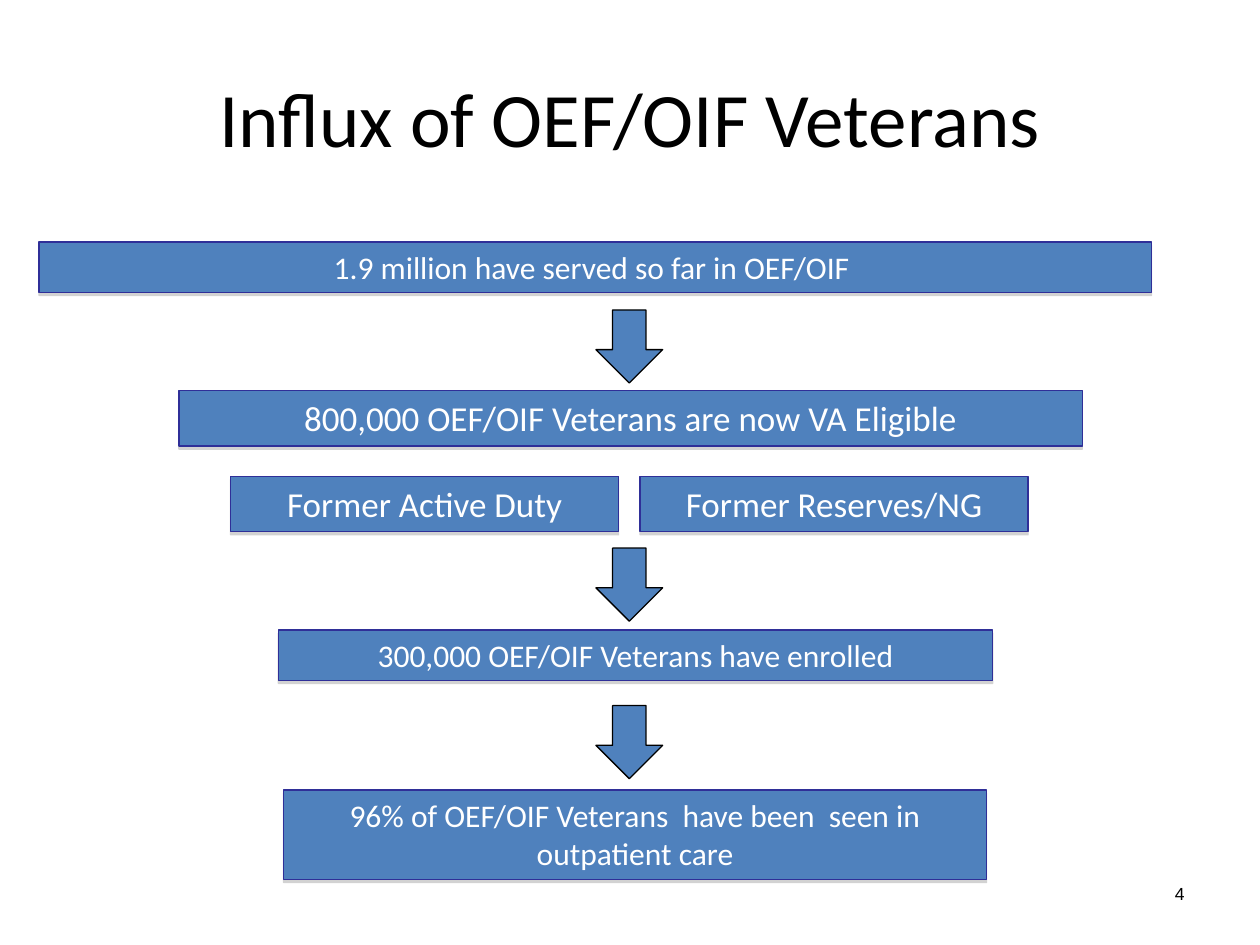
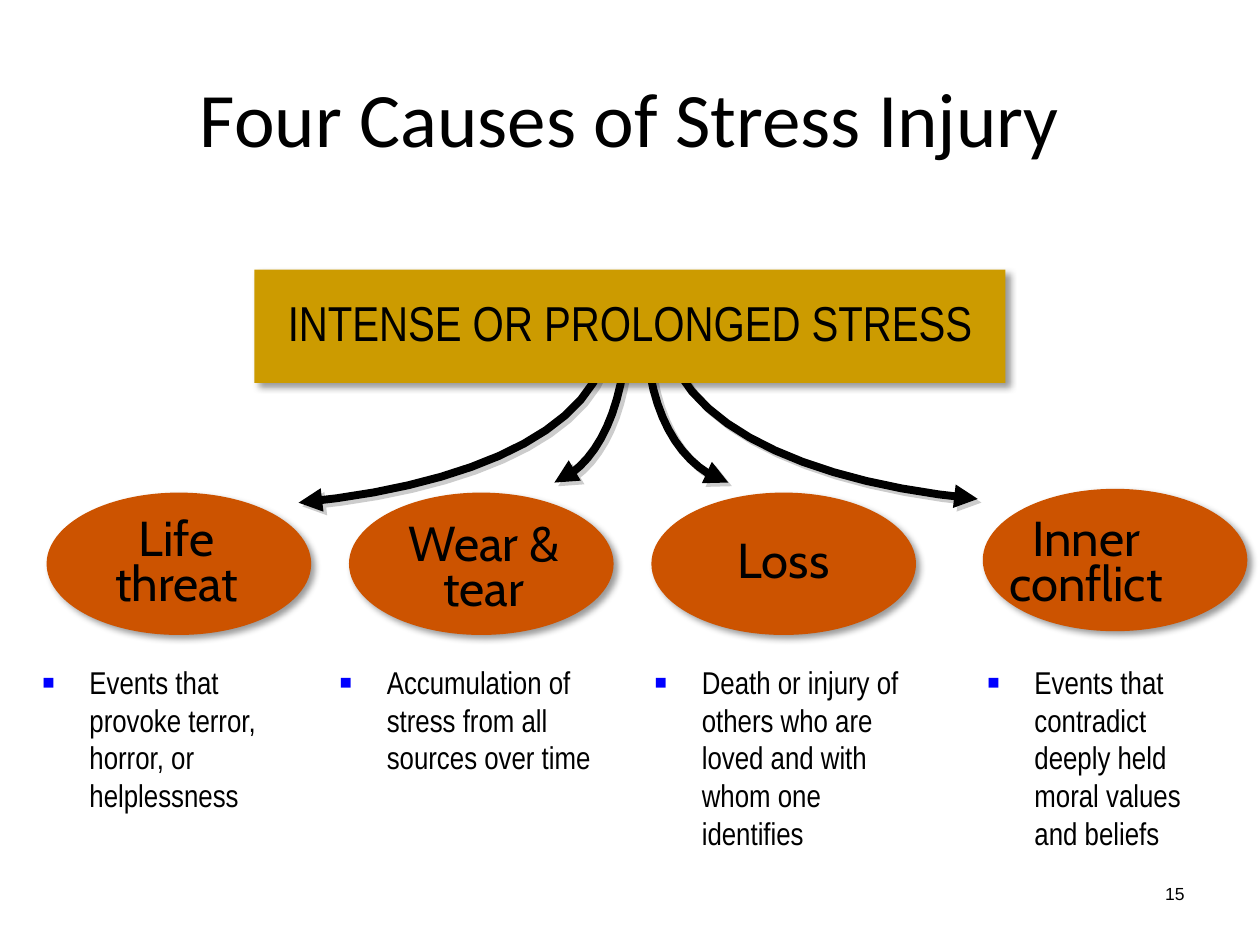
from dataclasses import dataclass

from lxml import etree
from pptx import Presentation
from pptx.dml.color import RGBColor
from pptx.enum.shapes import MSO_SHAPE
from pptx.enum.text import MSO_ANCHOR, MSO_AUTO_SIZE, PP_ALIGN
from pptx.oxml.ns import qn
from pptx.util import Inches, Pt

RECTANGLE, OVAL, DOWN_ARROW = MSO_SHAPE.RECTANGLE, MSO_SHAPE.OVAL, MSO_SHAPE.DOWN_ARROW
TOP, MIDDLE = MSO_ANCHOR.TOP, MSO_ANCHOR.MIDDLE
LEFT, CENTER, RIGHT = PP_ALIGN.LEFT, PP_ALIGN.CENTER, PP_ALIGN.RIGHT
NO_AUTO_SIZE = MSO_AUTO_SIZE.NONE
TITLE_ONLY_LAYOUT, FOUR_BODY_LAYOUT = 5, 4


@dataclass(frozen=True)
class Shadow:
    color: str
    opacity: int
    blur: float
    distance: float
    angle: int


@dataclass(frozen=True)
class Theme:
    black: str = "000000"
    white: str = "FFFFFF"
    blue: str = "4F81BD"
    box_line: str = "2F2F98"
    gold: str = "CC9B00"
    orange: str = "CC5300"
    bullet: str = "0000FF"
    title_font: str = "Calibri"
    narrow_font: str = "Arial Narrow"
    label_font: str = "Cabin"
    number_font: str = "Arial"
    title_size: int = 44
    label_size: int = 28
    box_size: int = 20
    text_size: int = 18
    number_size: int = 10
    thin: float = 0.75
    thick: float = 4.5
    box_shadow: Shadow = Shadow("808080", 35, 0, 1.8, 90)
    arrow_shadow: Shadow = Shadow("808080", 40, 0, 3, 45)
    soft_shadow: Shadow = Shadow("000000", 40, 4, 3, 45)
    text_shadow: Shadow = Shadow("C0C0C0", 100, 0, 1.5, 45)


def set_attributes(target, values):
    for name, value in values.items():
        setattr(target, name, value)


def add_outer_shadow(effect_list, shadow):
    outer = etree.SubElement(
        effect_list, qn("a:outerShdw"),
        blurRad=str(Pt(shadow.blur)), dist=str(Pt(shadow.distance)),
        dir=str(shadow.angle * 60000), algn="tl", rotWithShape="0")
    color = etree.SubElement(outer, qn("a:srgbClr"), val=shadow.color)
    etree.SubElement(color, qn("a:alpha"), val=str(shadow.opacity * 1000))


def curve_points(start, first_control, second_control, end, steps=14):
    """Sample a cubic Bézier curve, both ends included."""
    controls = (start, first_control, second_control, end)
    points = []
    for step in range(steps + 1):
        t = step / steps
        weights = ((1 - t) ** 3, 3 * t * (1 - t) ** 2, 3 * t * t * (1 - t), t ** 3)
        points.append(tuple(
            Inches(sum(weight * control[axis] for weight, control in zip(weights, controls)))
            for axis in (0, 1)))
    return points


class SlideBuilder:
    def __init__(self, theme):
        self.theme = theme
        self.presentation = Presentation()
        self.presentation.slide_width = Inches(10)
        self.presentation.slide_height = Inches(7.5)
        self.slide = None

    def new_slide(self, layout, title, number):
        theme = self.theme
        self.slide = self.presentation.slides.add_slide(
            self.presentation.slide_layouts[layout])
        heading = self.slide.shapes.title
        self.place(heading, (0.5, 0.3, 9, 1.25))
        self.add_text(heading, title, theme.title_font, theme.title_size)
        self.text_box((8.67, 6.83, 0.83, 0.52), number, theme.number_font,
                      theme.number_size, alignment=RIGHT)

    def place(self, shape, box):
        names = ("left", "top", "width", "height")
        set_attributes(shape, dict(zip(names, map(Inches, box))))

    def add_text(self, shape, text, font, size, color=None, anchor=MIDDLE,
                 shadow=None, **paragraph_format):
        frame = shape.text_frame
        set_attributes(frame, {
            "word_wrap": True, "auto_size": NO_AUTO_SIZE, "vertical_anchor": anchor})
        paragraph = frame.paragraphs[0]
        set_attributes(paragraph, {"alignment": CENTER, **paragraph_format})
        run = paragraph.add_run()
        run.text = text
        set_attributes(run.font, {"name": font, "size": Pt(size), "bold": False})
        run.font.color.rgb = RGBColor.from_string(color or self.theme.black)
        if shadow:
            effect_list = etree.Element(qn("a:effectLst"))
            add_outer_shadow(effect_list, shadow)
            run._r.rPr.find(qn("a:solidFill")).addnext(effect_list)
        return paragraph

    def text_box(self, box, text, font, size, **text_format):
        shape = self.slide.shapes.add_textbox(*map(Inches, box))
        self.add_text(shape, text, font, size, **text_format)

    def paint(self, shape, fill=None, line=None, line_width=None, shadow=None):
        if fill:
            shape.fill.solid()
            shape.fill.fore_color.rgb = RGBColor.from_string(fill)
        else:
            shape.fill.background()
        if line:
            shape.line.color.rgb = RGBColor.from_string(line)
            shape.line.width = Pt(line_width)
        else:
            shape.line.fill.background()
        shape.shadow.inherit = False
        if shadow:
            properties = shape._element.spPr
            add_outer_shadow(properties.find(qn("a:effectLst")), shadow)

    def shape(self, kind, box, **look):
        shape = self.slide.shapes.add_shape(kind, *map(Inches, box))
        self.paint(shape, **look)
        return shape

    def curved_arrow(self, *controls):
        """Draw a curve whose arrowhead sits at the first point."""
        start, *rest = curve_points(*controls)
        builder = self.slide.shapes.build_freeform(*start)
        builder.add_line_segments(rest, close=False)
        arrow = builder.convert_to_shape()
        theme = self.theme
        self.paint(arrow, line=theme.black, line_width=theme.thick,
                   shadow=theme.arrow_shadow)
        line = arrow._element.spPr.find(qn("a:ln"))
        etree.SubElement(line, qn("a:headEnd"), type="triangle")

    def bullet_list(self, index, box, text):
        theme = self.theme
        body = self.slide.placeholders[index]
        self.place(body, box)
        paragraph = self.add_text(
            body, text, theme.narrow_font, theme.text_size, anchor=TOP,
            shadow=theme.text_shadow, alignment=LEFT,
            space_before=Pt(theme.text_size * 0.2))
        properties = paragraph._p.get_or_add_pPr()
        indent = Inches(0.38)
        properties.set("marL", str(indent))
        properties.set("indent", str(-indent))
        color = etree.SubElement(properties, qn("a:buClr"))
        etree.SubElement(color, qn("a:srgbClr"), val=theme.bullet)
        etree.SubElement(properties, qn("a:buSzPct"), val="125000")
        etree.SubElement(properties, qn("a:buFont"), typeface="Arial")
        etree.SubElement(properties, qn("a:buChar"), char="▪")


def build_influx_slide(builder):
    theme = builder.theme
    builder.new_slide(TITLE_ONLY_LAYOUT, "Influx of OEF/OIF Veterans", "4")
    small, large = theme.text_size, theme.box_size
    funnel_boxes = (
        ((0.31, 1.92, 8.83, 0.4), small, "1.9 million have served so far in OEF/OIF "),
        ((1.42, 3.1, 7.17, 0.44), large, "800,000 OEF/OIF Veterans are now VA Eligible"),
        ((1.83, 3.78, 3.08, 0.44), large, "Former Active Duty"),
        ((5.08, 3.78, 3.08, 0.44), large, "Former Reserves/NG"),
        ((2.21, 5, 5.67, 0.4), small, "300,000 OEF/OIF Veterans have enrolled"),
        ((2.25, 6.27, 5.58, 0.71), small,
         "96% of OEF/OIF Veterans  have been  seen in outpatient care"),
    )
    for box, size, text in funnel_boxes:
        shape = builder.shape(RECTANGLE, box, fill=theme.blue, line=theme.box_line,
                              line_width=theme.thin, shadow=theme.box_shadow)
        builder.add_text(shape, text, theme.title_font, size, color=theme.white, anchor=TOP)
    for top in (2.46, 4.35, 5.6):
        builder.shape(DOWN_ARROW, (4.73, top, 0.53, 0.58), fill=theme.blue,
                      line=theme.black, line_width=theme.thin)


def build_causes_slide(builder):
    theme = builder.theme
    builder.new_slide(FOUR_BODY_LAYOUT, "Four Causes of Stress Injury", "15")
    stress_arrows = (
        ((5.78, 3.83), (5.39, 3.71), (5.12, 3.25), (5.13, 2.56)),
        ((7.76, 3.96), (6.28, 3.82), (5.24, 3.29), (5.27, 2.49)),
        ((4.4, 3.83), (4.74, 3.7), (4.98, 3.22), (4.98, 2.49)),
        ((2.37, 3.99), (3.83, 3.85), (4.86, 3.35), (4.83, 2.58)),
    )
    for controls in stress_arrows:
        builder.curved_arrow(*controls)
    stress = builder.shape(RECTANGLE, (2.02, 2.14, 5.96, 0.9), fill=theme.gold,
                           shadow=theme.soft_shadow)
    builder.add_text(stress, "INTENSE OR PROLONGED STRESS", theme.narrow_font,
                     theme.label_size, line_spacing=0.85)

    # Oval corner, label corner, label, label shadow, list left, width and height, list text
    causes = (
        ((0.37, 3.91), (0.53, 4.04), "Life threat", theme.text_shadow,
         (0.23, 2.3, 1.3), "Events that provoke terror, horror, or helplessness"),
        ((2.77, 3.91), (2.97, 4.08), "Wear & tear", None,
         (2.59, 2.47, 1), "Accumulation of stress from all sources over time"),
        ((5.17, 3.91), (5.35, 4.04), "Loss", None, (5.09, 2.32, 1.6),
         "Death or injury of others who are loved and with whom one identifies"),
        ((7.8, 3.88), (7.75, 4.04), "Inner conflict", None, (7.73, 2.11, 1.6),
         "Events that contradict deeply held moral values and beliefs"),
    )
    for index, cause in enumerate(causes, start=1):
        oval_corner, label_corner, label, shadow, (left, width, height), text = cause
        builder.shape(OVAL, (*oval_corner, 2.1, 1.13), fill=theme.orange,
                      shadow=theme.soft_shadow)
        builder.text_box((*label_corner, 1.74, 0.9), label, theme.label_font,
                         theme.label_size, shadow=shadow, line_spacing=0.75)
        builder.bullet_list(index, (left, 5.21, width, height), text)


def main():
    builder = SlideBuilder(Theme())
    build_influx_slide(builder)
    build_causes_slide(builder)
    builder.presentation.save("out.pptx")


if __name__ == "__main__":
    main()
